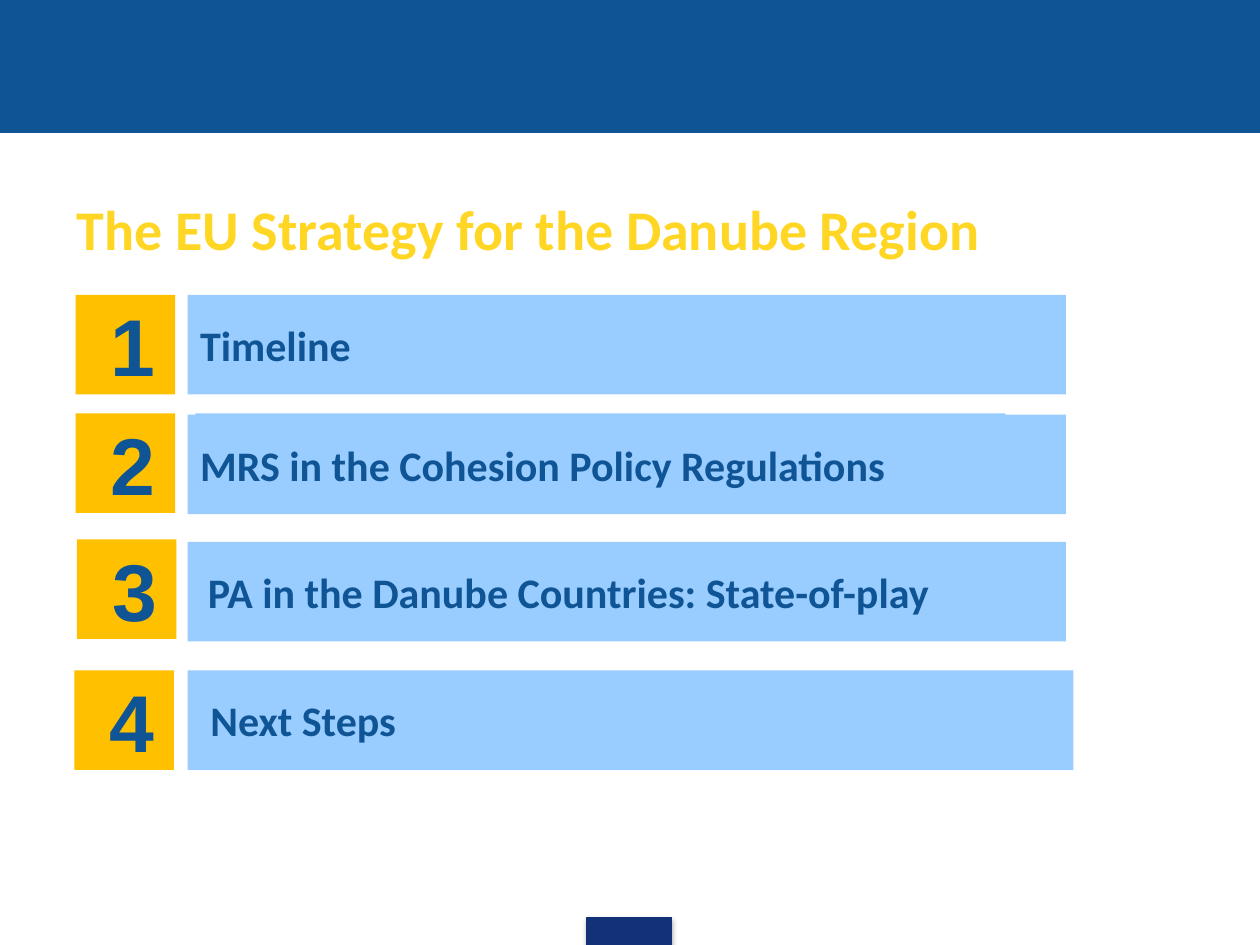
from lxml.etree import SubElement
from pptx import Presentation
from pptx.dml.color import RGBColor
from pptx.enum.shapes import MSO_SHAPE
from pptx.enum.text import MSO_ANCHOR, PP_ALIGN
from pptx.oxml.ns import qn
from pptx.util import Inches, Pt

COLORS = {
    "band": "0F5494",
    "tab": "133176",
    "title": "FFD624",
    "number": "FFC000",
    "topic": "99CCFF",
    "text": "0F5494",
    "shadow": "000000",
}
COLUMNS, ROWS = 100, 75
BOX = 7.9
TOPIC_LEFT = 14.9

# number left, number top, topic top, topic width, text inset, topic
AGENDA = [
    (6, 23.4, 23.4, 69.7, 1, "Timeline"),
    (6, 32.8, 32.9, 69.7, 1, "MRS in the Cohesion Policy Regulations"),
    (6.1, 42.8, 43, 69.7, 1.6, "PA in the Danube Countries: State-of-play"),
    (5.9, 53.2, 53.2, 70.3, 1.8, "Next Steps"),
]


class AgendaSlide:
    """Draws on one slide; lengths are columns and rows of a 100 x 75 grid."""

    def __init__(self, presentation):
        self.slide = presentation.slides.add_slide(presentation.slide_layouts[6])
        self.column = presentation.slide_width / COLUMNS
        self.row = presentation.slide_height / ROWS

    def place(self, left, top, width, height):
        return (round(left * self.column), round(top * self.row),
                round(width * self.column), round(height * self.row))

    def rectangle(self, area, color, outlined=False):
        shape = self.slide.shapes.add_shape(MSO_SHAPE.RECTANGLE, *self.place(*area))
        shape.shadow.inherit = False
        shape.fill.solid()
        shape.fill.fore_color.rgb = RGBColor.from_string(COLORS[color])
        if outlined:
            shape.line.color.rgb = RGBColor.from_string(COLORS[color])
            shape.line.width = Pt(0.75)
        else:
            shape.line.fill.background()
        return shape

    def label(self, shape, text, size, font="Calibri", color="text", inset=1):
        frame = shape.text_frame
        frame.word_wrap = True
        frame.vertical_anchor = MSO_ANCHOR.MIDDLE
        frame.margin_left = round(inset * self.column)
        paragraph = frame.paragraphs[0]
        paragraph.text = text
        paragraph.alignment = PP_ALIGN.LEFT
        paragraph.font.name = font
        paragraph.font.size = Pt(size)
        paragraph.font.bold = True
        paragraph.font.color.rgb = RGBColor.from_string(COLORS[color])

    def title(self, area, text):
        box = self.slide.shapes.add_textbox(*self.place(*area))
        self.label(box, text, 32, color="title", inset=4.9)

    def drop_shadow(self, shape):
        effects = shape._element.spPr.find(qn("a:effectLst"))
        shadow = SubElement(effects, qn("a:outerShdw"), blurRad=str(Pt(3.1)),
                            dist=str(Pt(1.8)), dir="5400000", rotWithShape="0")
        color = SubElement(shadow, qn("a:srgbClr"), val=COLORS["shadow"])
        SubElement(color, qn("a:alpha"), val="35000")

    def agenda_item(self, number, left, number_top, topic_top, width, inset, topic):
        bar = self.rectangle((TOPIC_LEFT, topic_top, width, BOX), "topic")
        self.label(bar, topic, 24, inset=inset)
        square = self.rectangle((left, number_top, BOX, BOX), "number")
        self.label(square, str(number), 46, font="Arial", inset=2.8)


def main():
    presentation = Presentation()
    presentation.slide_width = Inches(10)
    presentation.slide_height = Inches(7.5)

    agenda = AgendaSlide(presentation)
    agenda.rectangle((0, 0, COLUMNS, 10.5), "band", outlined=True)
    footer_tab = agenda.rectangle((46.6, 72.8, 6.7, 2.2), "tab", outlined=True)
    agenda.drop_shadow(footer_tab)
    agenda.title((1.2, 13, 90, 10.2), "The EU Strategy for the Danube Region")

    agenda.rectangle((15.5, 32.8, 64.3, BOX), "topic")
    for number, item in enumerate(AGENDA, start=1):
        agenda.agenda_item(number, *item)

    presentation.save("out.pptx")


if __name__ == "__main__":
    main()
